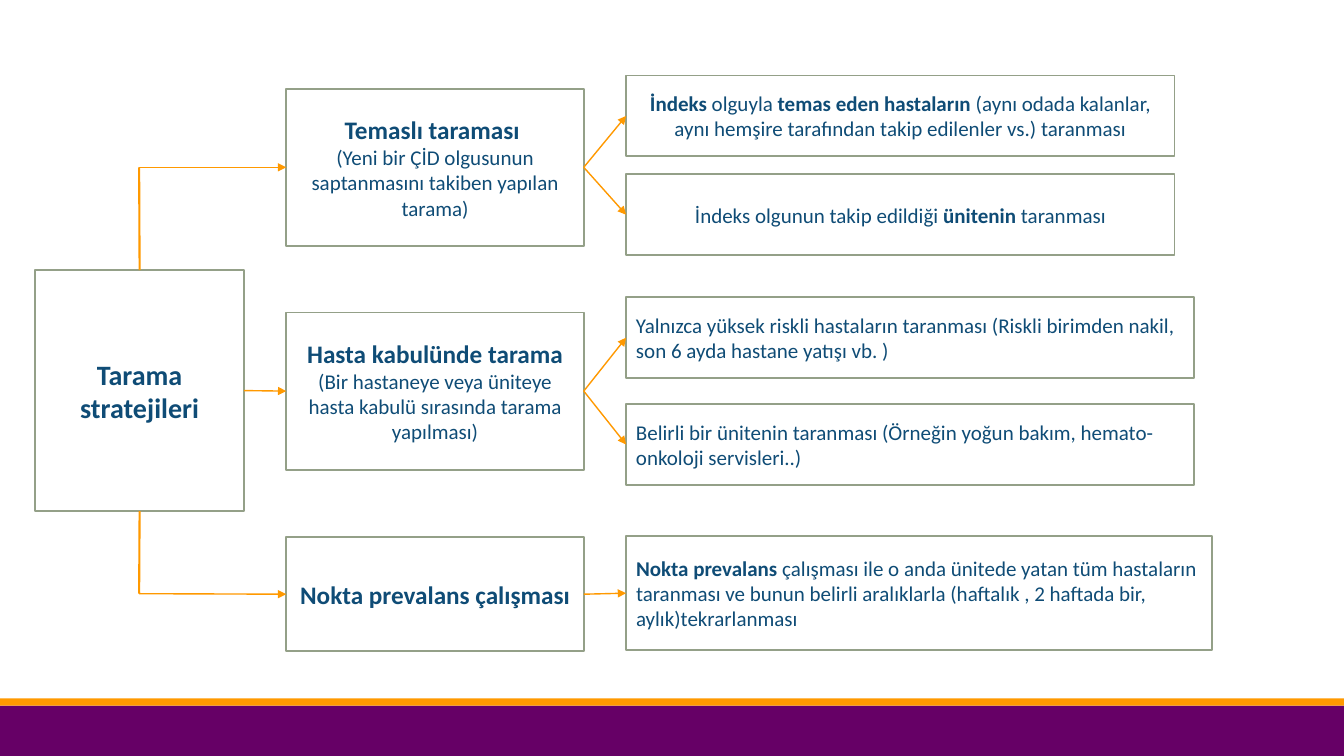
from lxml import etree
from pptx import Presentation
from pptx.dml.color import RGBColor
from pptx.enum import shapes, text
from pptx.oxml import ns
from pptx.util import Inches, Pt

NAVY = RGBColor(0x0F, 0x4C, 0x76)
SAGE = RGBColor(0x94, 0xA0, 0x88)
ORANGE = RGBColor(0xFF, 0x99, 0x00)
PURPLE = RGBColor(0x66, 0x00, 0x66)
WHITE = RGBColor(0xFF, 0xFF, 0xFF)
CENTER, LEFT = text.PP_ALIGN.CENTER, text.PP_ALIGN.LEFT

STRATEGY_LEFT, STRATEGY_WIDTH = 2.84, 2.95
DETAIL_LEFT = 6.21
TOP_SITE, LEFT_SITE, BOTTOM_SITE, RIGHT_SITE = range(4)

# Each strategy: top, height, paragraphs, details (top, width, height, alignment, wording)
# Wording between ** marks is bold
STRATEGIES = [
    (0.88, 1.56,
     [("**Temaslı taraması **", 18),
      ("(Yeni bir ÇİD olgusunun saptanmasını takiben yapılan tarama)", 15)],
     [(0.75, 5.44, 0.8, CENTER,
       "**İndeks **olguyla **temas eden hastaların **(aynı odada kalanlar, "
       "aynı hemşire tarafından takip edilenler vs.) taranması"),
      (1.73, 5.44, 0.8, CENTER,
       "İndeks olgunun takip edildiği **ünitenin** taranması")]),
    (3.1, 1.56,
     [("**Hasta kabulünde tarama**", 18),
      ("(Bir hastaneye veya üniteye hasta kabulü sırasında tarama yapılması)", 15)],
     [(2.95, 5.63, 0.8, LEFT,
       "Yalnızca yüksek riskli hastaların taranması (Riskli birimden nakil, "
       "son 6 ayda hastane yatışı vb. )"),
      (4.01, 5.63, 0.8, LEFT,
       "Belirli bir ünitenin taranması (Örneğin yoğun bakım, "
       "hemato-onkoloji servisleri..)")]),
    (5.33, 1.13,
     [("**Nokta prevalans çalışması**", 18)],
     [(5.32, 5.81, 1.13, LEFT,
       "**Nokta prevalans **çalışması ile o anda ünitede yatan tüm hastaların "
       "taranması ve bunun belirli aralıklarla (haftalık , 2 haftada bir, "
       "aylık)tekrarlanması")]),
]


def add_rectangle(slide, left, top, width, height, fill):
    shape = slide.shapes.add_shape(
        shapes.MSO_SHAPE.RECTANGLE,
        Inches(left), Inches(top), Inches(width), Inches(height))
    shape.shadow.inherit = False
    shape.fill.solid()
    shape.fill.fore_color.rgb = fill
    shape.line.fill.background()
    return shape


def fill_paragraph(paragraph, wording, size, alignment):
    paragraph.alignment = alignment
    for index, part in enumerate(wording.split("**")):
        if not part:
            continue
        run = paragraph.add_run()
        run.text = part
        run.font.name = "Calibri"
        run.font.size = Pt(size)
        run.font.bold = index % 2 == 1
        run.font.color.rgb = NAVY


def add_box(slide, left, top, width, height, paragraphs, alignment=CENTER):
    box = add_rectangle(slide, left, top, width, height, WHITE)
    box.line.color.rgb = SAGE
    box.line.width = Pt(1.25)
    frame = box.text_frame
    frame.word_wrap = True
    frame.vertical_anchor = text.MSO_ANCHOR.MIDDLE
    for index, (wording, size) in enumerate(paragraphs):
        paragraph = frame.add_paragraph() if index else frame.paragraphs[0]
        fill_paragraph(paragraph, wording, size, alignment)
    return box


def add_line(slide, begin=(0, 0), end=(0, 0), width=1.0, arrow=True):
    line = slide.shapes.add_connector(
        shapes.MSO_CONNECTOR.STRAIGHT,
        *[Inches(length) for length in (*begin, *end)])
    line.line.color.rgb = ORANGE
    line.line.width = Pt(width)
    if arrow:
        outline = line.line._get_or_add_ln()
        etree.SubElement(outline, ns.qn("a:tailEnd"), type="triangle")
    etree.SubElement(line._element.spPr, ns.qn("a:effectLst"))
    return line


def link_boxes(slide, source, target):
    arrow = add_line(slide)
    arrow.begin_connect(source, RIGHT_SITE)
    arrow.end_connect(target, LEFT_SITE)


def add_branch(slide, root, root_site, target, corner):
    stem = add_line(slide, end=corner, width=1.5, arrow=False)
    stem.begin_connect(root, root_site)
    arrow = add_line(slide, begin=corner)
    arrow.end_connect(target, LEFT_SITE)


def main():
    presentation = Presentation()
    presentation.slide_width = Inches(13.33)
    presentation.slide_height = Inches(7.5)
    slide = presentation.slides.add_slide(presentation.slide_layouts[6])

    # Footer bands
    add_rectangle(slide, 0, 7, 13.33, 0.5, PURPLE)
    add_rectangle(slide, 0, 6.93, 13.33, 0.07, ORANGE)

    # Root, strategies and their details
    root = add_box(slide, 0.35, 2.68, 2.07, 2.39, [("**Tarama stratejileri**", 20)])
    strategies = []
    for top, height, paragraphs, details in STRATEGIES:
        strategy = add_box(slide, STRATEGY_LEFT, top, STRATEGY_WIDTH, height, paragraphs)
        strategies.append(strategy)
        for detail_top, width, detail_height, alignment, wording in details:
            detail = add_box(slide, DETAIL_LEFT, detail_top, width, detail_height,
                             [(wording, 15)], alignment)
            link_boxes(slide, strategy, detail)

    # Branches from the root
    contact, admission, prevalence = strategies
    add_branch(slide, root, TOP_SITE, contact, (1.38, 1.66))
    link_boxes(slide, root, admission)
    add_branch(slide, root, BOTTOM_SITE, prevalence, (1.38, 5.89))

    presentation.save("out.pptx")


if __name__ == "__main__":
    main()
